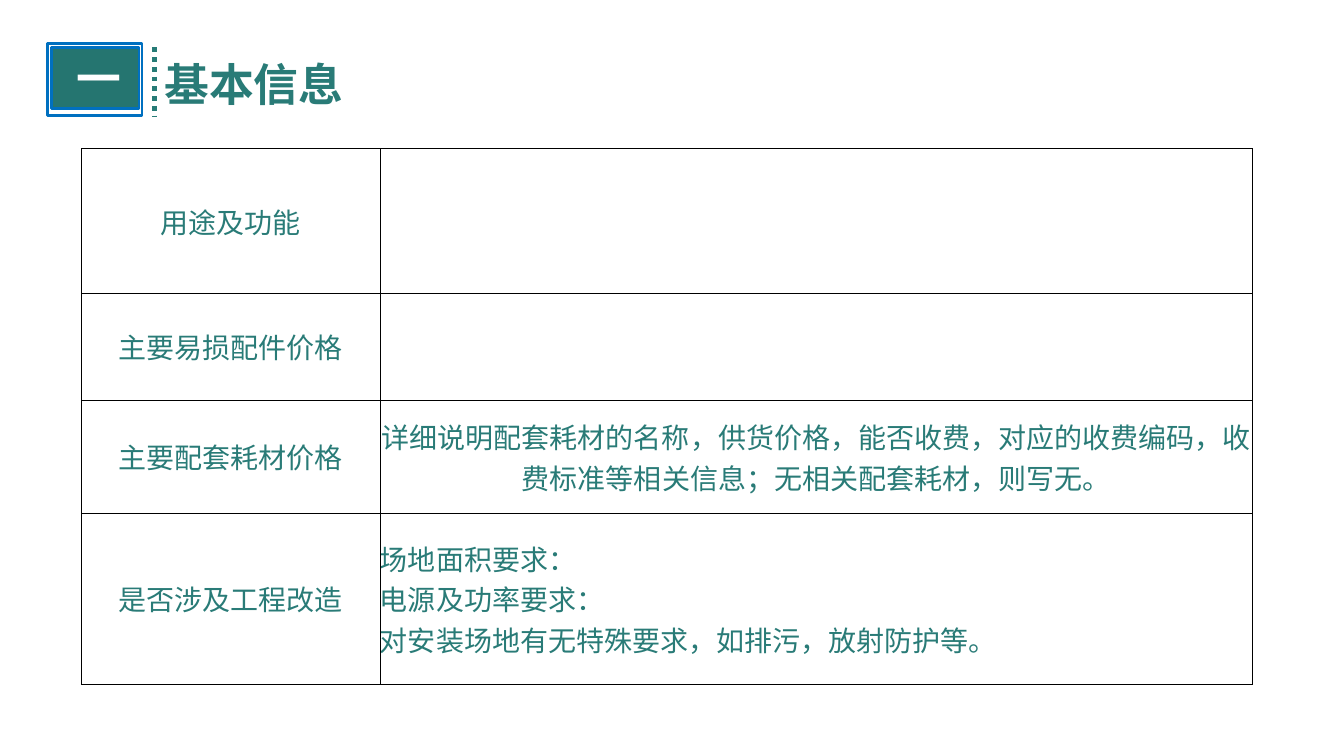
import pptx
import pptx.util
import pptx.dml.color
import pptx.enum.dml
import pptx.enum.shapes
import pptx.enum.text
import pptx.oxml
import pptx.oxml.ns
import lxml.etree

Pt = pptx.util.Pt
RGB = pptx.dml.color.RGBColor.from_string
ALIGN = pptx.enum.text.PP_ALIGN
MIDDLE = pptx.enum.text.MSO_ANCHOR.MIDDLE
qn = pptx.oxml.ns.qn

FONT = "Noto Sans CJK SC"
COLORS = {
    "text": "297B77",
    "badge": "257570",
    "dots": "267B76",
    "frame": "0070C0",
    "white": "FFFFFF",
    "border": "000000",
}


def write_text(text_frame, text, size=20, color="text", bold=False, align=ALIGN.LEFT):
    for index, line in enumerate(text.split("\n")):
        paragraph = text_frame.paragraphs[0] if index == 0 else text_frame.add_paragraph()
        paragraph.alignment = align
        run = paragraph.add_run()
        run.text = line
        run.font.size = Pt(size)
        run.font.bold = bold
        run.font.color.rgb = RGB(COLORS[color])
        run.font.name = FONT
        east_asian = lxml.etree.SubElement(run.font._element, qn("a:ea"))
        east_asian.set("typeface", FONT)


def add_borders(cell, color="border", width=0.5):
    properties = cell._tc.get_or_add_tcPr()
    for index, side in enumerate(("lnL", "lnR", "lnT", "lnB")):
        border = pptx.oxml.parse_xml(
            f'<a:{side} xmlns:a="http://schemas.openxmlformats.org/drawingml/2006/main" '
            f'w="{Pt(width)}"><a:solidFill><a:srgbClr val="{COLORS[color]}"/>'
            f'</a:solidFill><a:prstDash val="solid"/></a:{side}>')
        properties.insert(index, border)


presentation = pptx.Presentation()
presentation.slide_width = Pt(960)
presentation.slide_height = Pt(540)
slide = presentation.slides.add_slide(presentation.slide_layouts[5])

# Title
title = slide.shapes.title
title.left, title.top, title.width, title.height = Pt(110.2), Pt(36.7), Pt(311.8), Pt(45.4)
title.text_frame.auto_size = pptx.enum.text.MSO_AUTO_SIZE.NONE
title.text_frame.vertical_anchor = MIDDLE
write_text(title.text_frame, "基本信息", size=32, bold=True)

# Section badge: white frame behind a green block
badge = slide.shapes.add_group_shape()
for left, top, width, height, fill in (
    (33.8, 31, 67.7, 51.8, "white"),
    (36.7, 33.8, 62.6, 43.9, "badge"),
):
    shape = badge.shapes.add_shape(
        pptx.enum.shapes.MSO_SHAPE.RECTANGLE, Pt(left), Pt(top), Pt(width), Pt(height))
    shape.shadow.inherit = False
    shape.fill.solid()
    shape.fill.fore_color.rgb = RGB(COLORS[fill])
    shape.line.color.rgb = RGB(COLORS["frame"])
    shape.line.width = Pt(2)

# Section number
number = slide.shapes.add_textbox(Pt(47.5), Pt(32.4), Pt(49.7), Pt(46.1))
number.text_frame.word_wrap = True
number.text_frame.vertical_anchor = MIDDLE
write_text(number.text_frame, "一", size=32, color="white", bold=True)

# Dotted divider
divider = slide.shapes.add_connector(
    pptx.enum.shapes.MSO_CONNECTOR.STRAIGHT, Pt(110.2), Pt(33.8), Pt(110.2), Pt(82.8))
divider.line.color.rgb = RGB(COLORS["dots"])
divider.line.width = Pt(3.5)
divider.line.dash_style = pptx.enum.dml.MSO_LINE.ROUND_DOT
lxml.etree.SubElement(divider._element.spPr, qn("a:effectLst"))

# Information table: row height, label, content, content alignment
rows = [
    (103.5, "用途及功能", "", ALIGN.LEFT),
    (76.3, "主要易损配件价格", "", ALIGN.LEFT),
    (80.6, "主要配套耗材价格",
     "详细说明配套耗材的名称，供货价格，能否收费，对应的收费编码，收费标准等相关信息；无相关配套耗材，则写无。",
     ALIGN.CENTER),
    (122.3, "是否涉及工程改造",
     "场地面积要求：\n电源及功率要求：\n对安装场地有无特殊要求，如排污，放射防护等。", ALIGN.LEFT),
]
column_widths = (213.1, 623.5)
table = slide.shapes.add_table(
    len(rows), 2, Pt(58.3), Pt(106), Pt(sum(column_widths)),
    Pt(sum(row[0] for row in rows))).table
table.first_row = False
table.horz_banding = False
for column, width in zip(table.columns, column_widths):
    column.width = Pt(width)
for row_index, (height, label, content, content_align) in enumerate(rows):
    table.rows[row_index].height = Pt(height)
    for column_index, (text, align) in enumerate(
            ((label, ALIGN.CENTER), (content, content_align))):
        cell = table.cell(row_index, column_index)
        cell.fill.background()
        cell.vertical_anchor = MIDDLE
        cell.margin_left = cell.margin_right = cell.margin_top = cell.margin_bottom = 0
        add_borders(cell)
        if text:
            write_text(cell.text_frame, text, align=align)

presentation.save("out.pptx")
